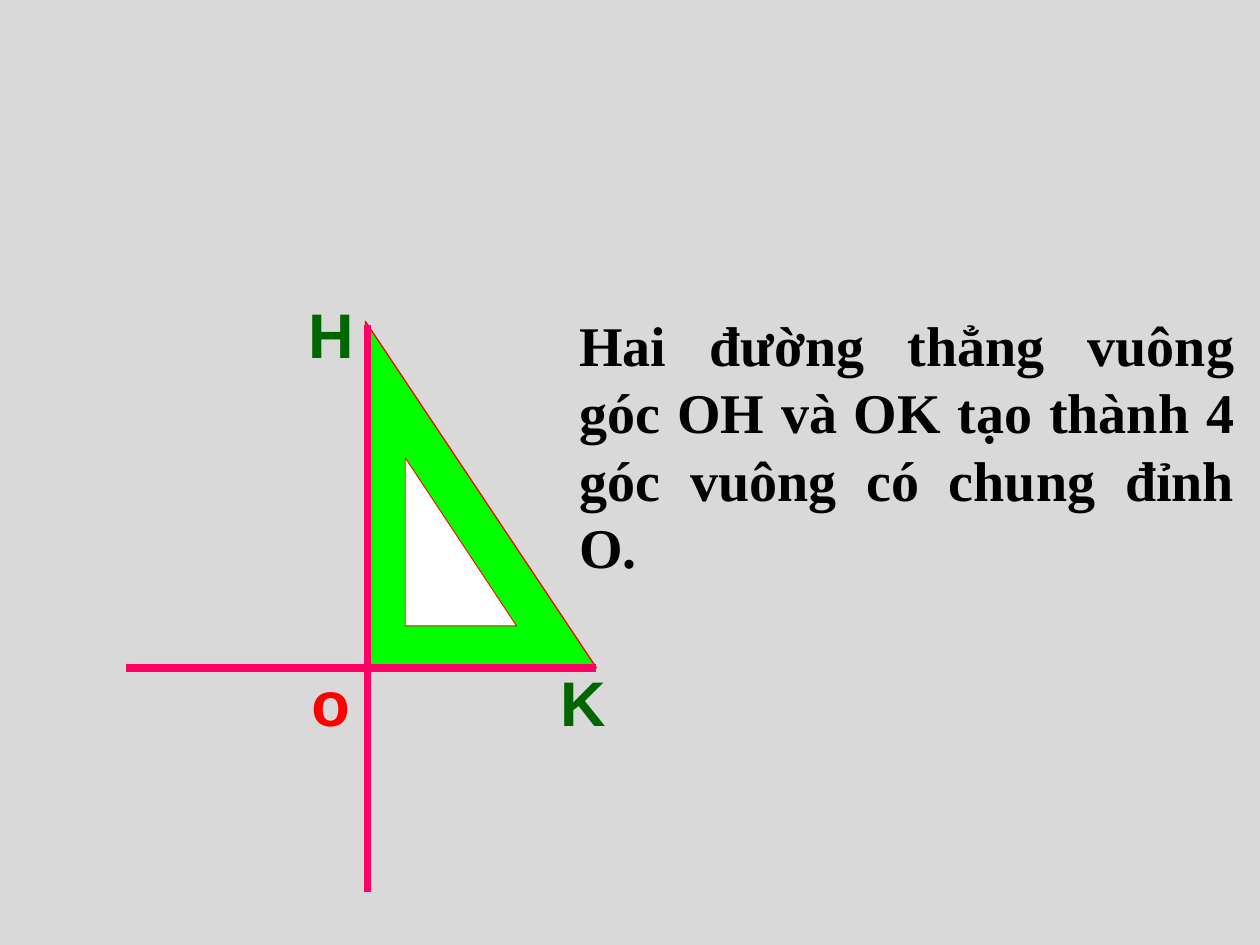
import pptx
import pptx.dml.color
import pptx.enum.shapes
import pptx.enum.text
import pptx.oxml
import pptx.oxml.ns
import pptx.util

COLORS = {"back": "D9D9D9", "square": "00FF00", "hole": "FFFFFF", "edge": "FF0000",
          "ray": "FF0066", "origin": "FF0000", "end": "006600", "text": "000000"}
ALIGN = pptx.enum.text.PP_ALIGN


class Board:
    """Draws on one slide in a grid of 120 columns by 90 rows."""

    def __init__(self, prs):
        self.unit = prs.slide_width / 120
        self.slide = prs.slides.add_slide(prs.slide_layouts[6])
        self.paint(self.slide.background.fill, "back")

    def grid(self, *cells):
        return [pptx.util.Emu(round(c * self.unit)) for c in cells]

    def color(self, name):
        return pptx.dml.color.RGBColor.from_string(COLORS[name])

    def paint(self, fill, name):
        fill.solid()
        fill.fore_color.rgb = self.color(name)

    def triangle(self, box, fill, width):
        kind = pptx.enum.shapes.MSO_SHAPE.RIGHT_TRIANGLE
        sp = self.slide.shapes.add_shape(kind, *self.grid(*box))
        sp.shadow.inherit = False
        self.paint(sp.fill, fill)
        self.paint(sp.line.fill, "edge")
        sp.line.width = pptx.util.Pt(width)

    def ray(self, start, end):
        kind = pptx.enum.shapes.MSO_CONNECTOR.STRAIGHT
        cxn = self.slide.shapes.add_connector(kind, *self.grid(*start, *end))
        self.paint(cxn.line.fill, "ray")
        cxn.line.width = pptx.util.Pt(4.5)
        effects = pptx.oxml.ns.qn("a:effectLst")
        cxn._element.spPr.append(pptx.oxml.xmlchemy.OxmlElement("a:effectLst")
                                 if cxn._element.spPr.find(effects) is None
                                 else cxn._element.spPr.find(effects))

    def text(self, box, words, color, size, font="Arial", align=ALIGN.CENTER):
        sp = self.slide.shapes.add_textbox(*self.grid(*box))
        tf = sp.text_frame
        tf.word_wrap = True
        tf.auto_size = pptx.enum.text.MSO_AUTO_SIZE.SHAPE_TO_FIT_TEXT
        p = tf.paragraphs[0]
        p.text = words
        p.alignment = align
        p.space_before = pptx.util.Pt(0)
        before = p._p.pPr.find(pptx.oxml.ns.qn("a:spcBef"))
        before.remove(before[0])
        before.append(pptx.oxml.parse_xml(
            f'<a:spcPct {pptx.oxml.ns.nsdecls("a")} val="50000"/>'))
        p.font.name = font
        p.font.size = pptx.util.Pt(size)
        p.font.bold = True
        p.font.color.rgb = self.color(color)


def main():
    prs = pptx.Presentation()
    prs.slide_width = pptx.util.Inches(10)
    prs.slide_height = pptx.util.Inches(7.5)
    board = Board(prs)

    board.triangle((34.8, 30.6, 22, 33), "square", 0.75)
    board.triangle((38.6, 43.6, 10.6, 16), "hole", 0.5)

    origin = (35, 63.6)
    for end in ((35, 31), (56.8, 63.6), (35, 85), (12, 63.6)):
        board.ray(origin, end)

    for words, col, row, color in (("o", 28, 62.6, "origin"),
                                   ("H", 28, 27.6, "end"),
                                   ("K", 52, 62.6, "end")):
        board.text((col, row, 7, 8.4), words, color, 36)

    board.text((54, 29, 64.8, 20.6),
               "Hai đường thẳng vuông góc OH và OK tạo thành 4 góc vuông có chung đỉnh O.",
               "text", 32, "Times New Roman", ALIGN.JUSTIFY)
    prs.save("out.pptx")


if __name__ == "__main__":
    main()
